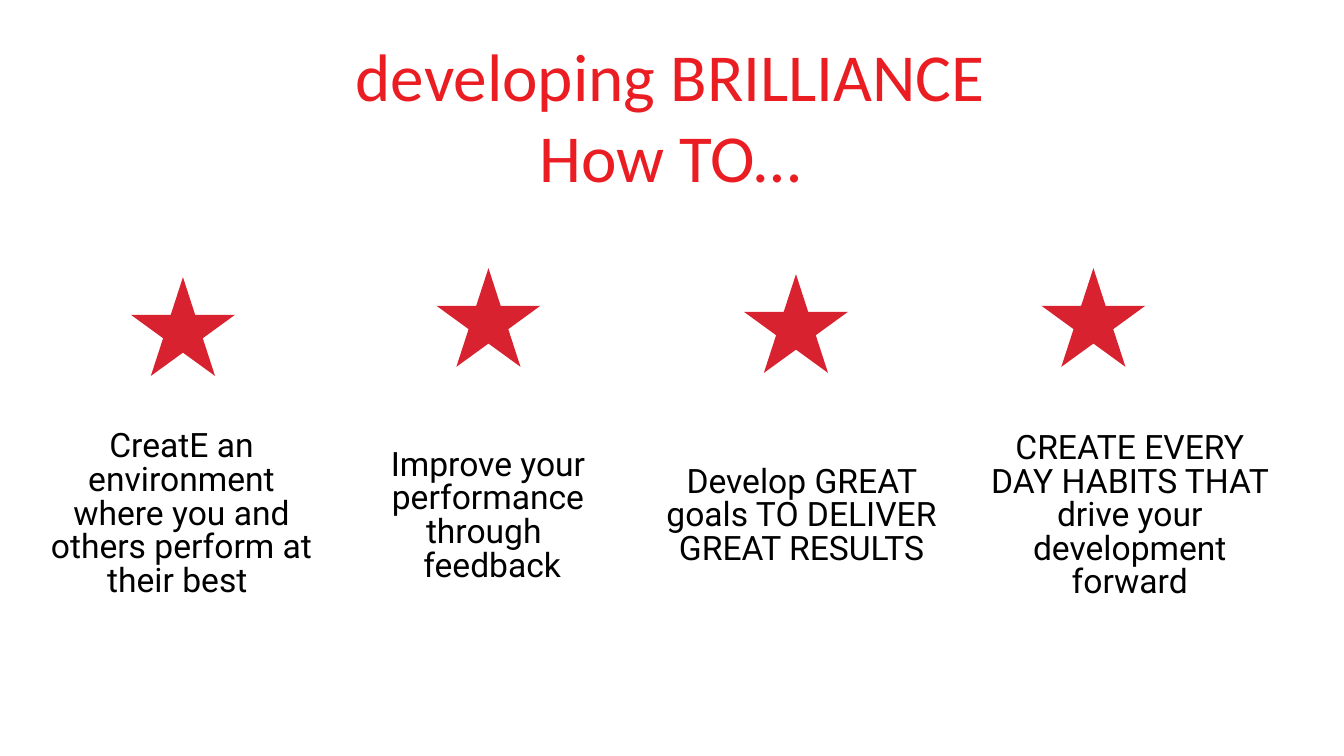
import dataclasses

import pptx
import pptx.dml.color
import pptx.enum.shapes
import pptx.enum.text
import pptx.util

PX = 9144


@dataclasses.dataclass(frozen=True)
class Theme:
    """Colours, fonts and type sizes of the slide."""
    title_color: str = "EA1D22"
    star_color: str = "D8222F"
    text_color: str = "000000"
    background: str = "FFFFFF"
    title_font: str = "Calibri"
    body_font: str = "Roboto"
    title_size: int = 48
    body_size: int = 24


@dataclasses.dataclass(frozen=True)
class Box:
    """A rectangle in px."""
    left: int
    top: int
    width: int
    height: int

    def emu(self):
        """Return the four lengths in EMU."""
        return [length * PX for length in dataclasses.astuple(self)]


THEME = Theme()
STAR_WIDTH, STAR_HEIGHT = 103, 98
TITLE = "developing BRILLIANCE\nHow TO…"
STEPS = [
    (Box(41, 414, 278, 194), 89, 139,
     "CreatE an environment where you and others perform at their best "),
    (Box(340, 416, 288, 193), 93, 150,
     "Improve your performance through \n feedback"),
    (Box(653, 416, 284, 193), 85, 144,
     "Develop GREAT goals TO DELIVER GREAT RESULTS"),
    (Box(981, 416, 279, 193), 52, 150,
     "CREATE EVERY DAY HABITS THAT drive your development forward"),
]


def rgb(color):
    """Turn a hex string into a colour."""
    return pptx.dml.color.RGBColor.from_string(color)


def write_text(shape, text, *, font, size, color, anchor, spacing=None):
    """Write centred text without margins into a shape."""
    frame = shape.text_frame
    frame.word_wrap = True
    frame.vertical_anchor = anchor
    frame.margin_left = frame.margin_right = 0
    frame.margin_top = frame.margin_bottom = 0
    paragraph = frame.paragraphs[0]
    paragraph.text = text.replace("\n", "\v")
    paragraph.alignment = pptx.enum.text.PP_ALIGN.CENTER
    if spacing:
        paragraph.line_spacing = pptx.util.Pt(spacing)
    for run in paragraph.runs:
        run.font.name = font
        run.font.size = pptx.util.Pt(size)
        run.font.color.rgb = rgb(color)


def add_filled(slide, kind, box, color):
    """Add a flat preset shape without an outline."""
    shape = slide.shapes.add_shape(kind, *box.emu())
    shape.shadow.inherit = False
    shape.fill.solid()
    shape.fill.fore_color.rgb = rgb(color)
    shape.line.fill.background()
    return shape


def add_title(slide, box):
    """Add the two-line title, resting on the bottom of its box."""
    shape = slide.shapes.add_textbox(*box.emu())
    write_text(shape, TITLE, font=THEME.title_font, size=THEME.title_size,
               color=THEME.title_color, anchor=pptx.enum.text.MSO_ANCHOR.BOTTOM)


def add_step(slide, box, star_offset, star_rise, text):
    """Add one step: its text in the box and a star above it."""
    kinds = pptx.enum.shapes.MSO_SHAPE
    panel = add_filled(slide, kinds.RECTANGLE, box, THEME.background)
    write_text(panel, text, font=THEME.body_font, size=THEME.body_size,
               color=THEME.text_color, spacing=THEME.body_size,
               anchor=pptx.enum.text.MSO_ANCHOR.MIDDLE)
    star = Box(box.left + star_offset, box.top - star_rise, STAR_WIDTH, STAR_HEIGHT)
    add_filled(slide, kinds.STAR_5_POINT, star, THEME.star_color)


def main():
    """Build and save the presentation."""
    presentation = pptx.Presentation()
    presentation.slide_width = 1333 * PX
    presentation.slide_height = 750 * PX
    slide = presentation.slides.add_slide(presentation.slide_layouts[6])
    slide.background.fill.solid()
    slide.background.fill.fore_color.rgb = rgb(THEME.background)
    add_title(slide, Box(258, 96, 814, 98))
    for step in STEPS:
        add_step(slide, *step)
    presentation.save("out.pptx")


if __name__ == "__main__":
    main()
